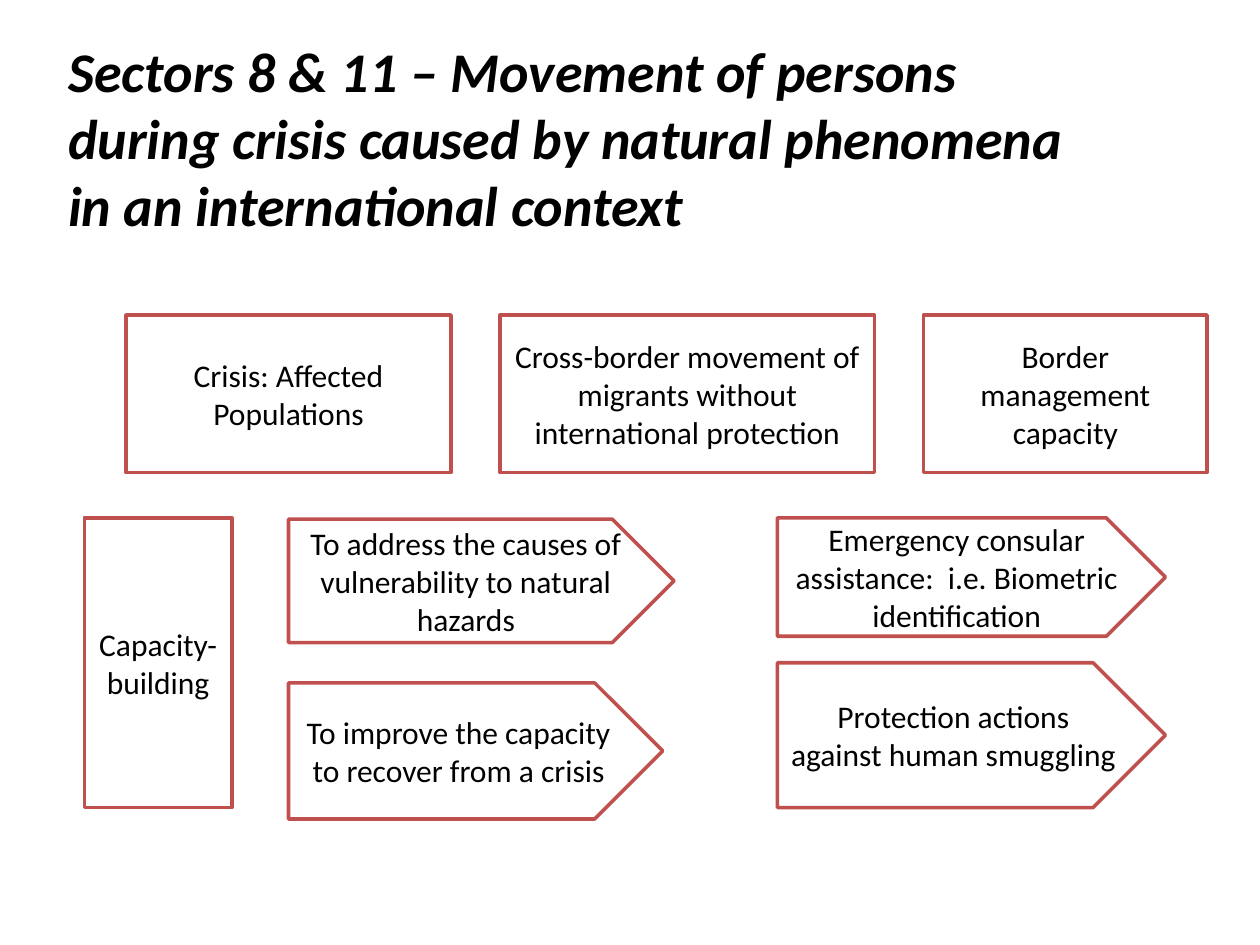
from pptx import Presentation
from pptx.dml.color import RGBColor
from pptx.enum.shapes import MSO_SHAPE as Kind
from pptx.enum.text import MSO_ANCHOR as Anchor, MSO_AUTO_SIZE as Fit, PP_ALIGN as Align
from pptx.util import Inches, Pt

BLACK = RGBColor(0x00, 0x00, 0x00)
WHITE = RGBColor(0xFF, 0xFF, 0xFF)
RED = RGBColor(0xC0, 0x50, 0x4D)

# Grid of 100 columns by 75 rows
COLS, ROWS = 100, 75
WIDE, HIGH = Inches(10), Inches(7.5)

BODY = {"size": Pt(18), "name": "Calibri"}
HEAD = {"size": Pt(32), "name": "Calibri", "bold": True, "italic": True}


def place(box):
    """Turn a box in columns and rows into slide lengths."""
    x, y, w, h = box
    return (round(x * WIDE / COLS), round(y * HIGH / ROWS),
            round(w * WIDE / COLS), round(h * HIGH / ROWS))


def write(shape, text, look, align, anchor):
    frame = shape.text_frame
    frame.text = text
    frame.word_wrap = True
    frame.vertical_anchor = anchor
    para = frame.paragraphs[0]
    para.alignment = align
    font = para.runs[0].font
    for key, value in look.items():
        setattr(font, key, value)
    font.color.rgb = BLACK


def card(slide, kind, box, text):
    """Outlined shape with centred text."""
    shape = slide.shapes.add_shape(kind, *place(box))
    shape.shadow.inherit = False
    shape.fill.solid()
    shape.fill.fore_color.rgb = WHITE
    shape.line.color.rgb = RED
    shape.line.width = Pt(2)
    write(shape, text, BODY, Align.CENTER, Anchor.MIDDLE)


def title(slide, box, text):
    shape = slide.shapes.title
    shape.left, shape.top, shape.width, shape.height = place(box)
    write(shape, text, HEAD, Align.LEFT, Anchor.TOP)
    shape.text_frame.auto_size = Fit.SHAPE_TO_FIT_TEXT


def themes(slide, box, items):
    """Row of cards with equal gaps across the box."""
    x, y, w, h = box
    gap = (w - sum(wide for wide, _ in items)) / (len(items) - 1)
    for wide, text in items:
        card(slide, Kind.RECTANGLE, (x, y, wide, h), text)
        x += wide + gap


def actions(slide, box, items):
    """Column of arrows with equal gaps down the box."""
    x, y, w, h = box
    gap = (h - sum(high for _, high, _ in items)) / (len(items) - 1)
    for wide, high, text in items:
        card(slide, Kind.PENTAGON, (x, y, wide, high), text)
        y += high + gap


def main():
    deck = Presentation()
    deck.slide_width, deck.slide_height = WIDE, HIGH
    slide = deck.slides.add_slide(deck.slide_layouts[5])

    title(slide, (4.4, 2.4, 81.4, 17.2),
          "Sectors 8 & 11 – Movement of persons during crisis caused by "
          "natural phenomena in an international context")

    # Themes: width and text
    themes(slide, (10, 25, 85.8, 12.5), [
        (25.8, "Crisis: Affected Populations"),
        (29.7, "Cross-border movement of migrants without international protection"),
        (22.5, "Border management capacity"),
    ])

    # Capacity-building: label, then two columns of width, height and text
    card(slide, Kind.RECTANGLE, (6.7, 41.1, 11.7, 23), "Capacity-building")
    actions(slide, (22.9, 41.2, 30.6, 23.8), [
        (30.6, 9.8, "To address the causes of vulnerability to natural hazards"),
        (29.7, 10.8, "To improve the capacity to recover from a crisis"),
    ])
    actions(slide, (61.7, 41.1, 30.8, 23), [
        (30.8, 9.4, "Emergency consular assistance:  i.e. Biometric identification"),
        (30.8, 11.5, "Protection actions against human smuggling"),
    ])

    deck.save("out.pptx")


if __name__ == "__main__":
    main()
